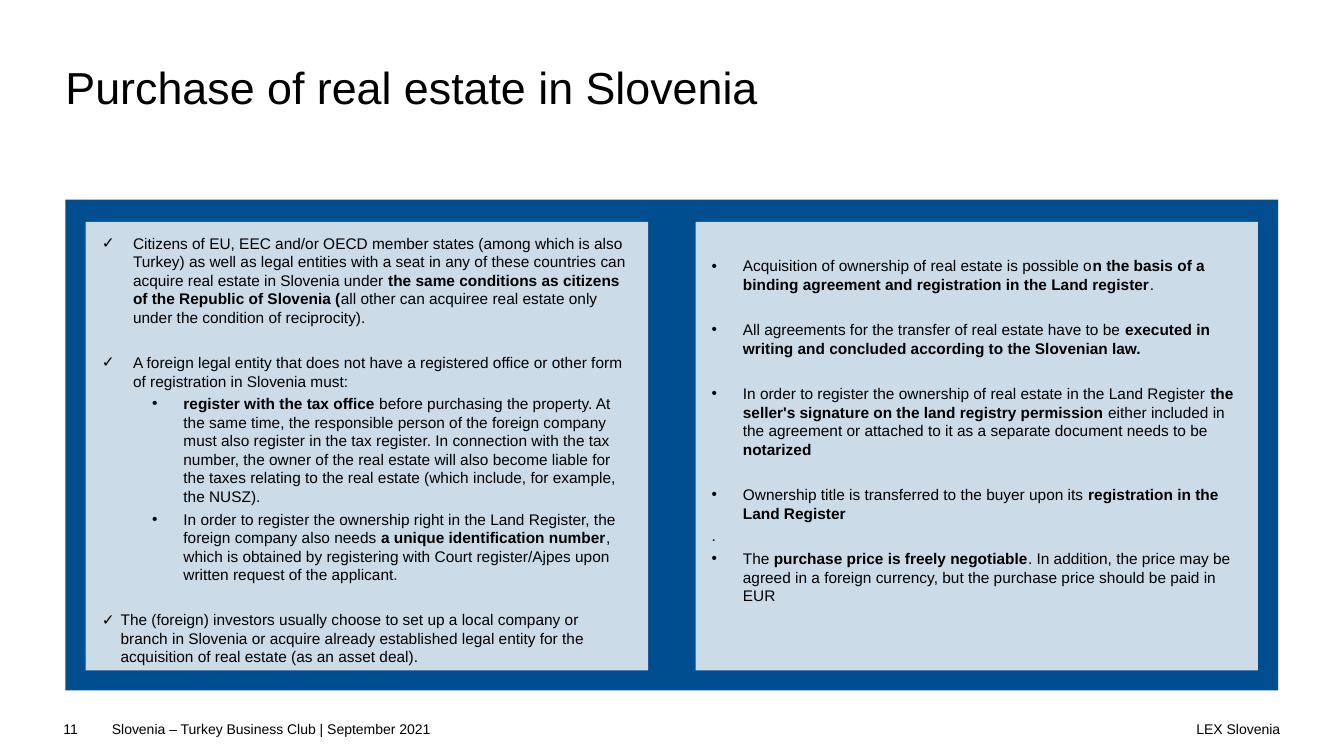
from dataclasses import dataclass
from typing import Optional

from lxml.etree import SubElement
from pptx import Presentation
from pptx.dml.color import RGBColor
from pptx.enum.shapes import MSO_SHAPE as Preset
from pptx.enum.text import MSO_ANCHOR as Anchor, PP_ALIGN as Align
from pptx.oxml.ns import qn
from pptx.util import Inches, Pt

# Grid: ten columns and ten rows to the inch
COLUMNS, ROWS = 133.33, 75
CELL = Inches(0.1)
FONT = "Arial"
BLACK, WHITE, NAVY = "000000", "FFFFFF", "004D90"
BODY_SIZE = 11
SPACE_AFTER = 3
LINE_GAP = 16.25  # one body line plus the space after it, in points


@dataclass(frozen=True)
class Box:
    column: float
    row: float
    columns: float
    rows: float


@dataclass(frozen=True)
class Label:
    text: str
    box: Box
    size: float
    align: Align = Align.LEFT
    line_spacing: float = 1.0


@dataclass(frozen=True)
class Item:
    text: str  # bold parts stand between double asterisks
    bullet: Optional[str] = "•"
    margin: float = 3.1
    hanging: float = 3.1
    gap_before: bool = False


@dataclass(frozen=True)
class Panel:
    items: list[Item]
    top_inset: float


BOARD = Box(6.5, 19.8, 120.3, 48.7)
PANEL_COLUMNS, PANEL_ROWS = 55.8, 44.5
PANEL_MARGIN, PANEL_TOP = 2, 22

LABELS = [
    Label("Purchase of real estate in Slovenia", Box(6.5, 6.5, 120.3, 9.8), 32, line_spacing=0.9),
    Label("11", Box(6.3, 71.5, 4.7, 2.8), 10),
    Label("Slovenia – Turkey Business Club | September 2021", Box(11.1, 71.5, 55.5, 2.8), 10),
    Label("LEX Slovenia", Box(66.7, 71.5, 60.3, 2.8), 10, Align.RIGHT),
]

ENTITIES = Panel([
    Item("Citizens of EU, EEC and/or OECD member states (among which is also Turkey) as well as "
         "legal entities with a seat in any of these countries can acquire real estate in Slovenia "
         "under **the same conditions as citizens of the Republic of Slovenia (**all other can "
         "acquiree real estate only under the condition of reciprocity).", "✓"),
    Item("A foreign legal entity that does not have a registered office or other form of "
         "registration in Slovenia must:", "✓", gap_before=True),
    Item("**register with the tax office **before purchasing the property. At the same time, the "
         "responsible person of the foreign company must also register in the tax register. In "
         "connection with the tax number, the owner of the real estate will also become liable for "
         "the taxes relating to the real estate (which include, for example, the NUSZ).", margin=8.1),
    Item("In order to register the ownership right in the Land Register, the foreign company also "
         "needs **a unique identification number**, which is obtained by registering with Court "
         "register/Ajpes upon written request of the applicant.", margin=8.1),
    Item("The (foreign) investors usually choose to set up a local company or branch in Slovenia or "
         "acquire already established legal entity for the acquisition of real estate (as an asset "
         "deal).", "✓", 1.87, 1.87, gap_before=True),
], top_inset=1.2)

AGREEMENTS = Panel([
    Item("Acquisition of ownership of real estate is possible o**n the basis of a binding agreement "
         "and registration in the Land register**."),
    Item("All agreements for the transfer of real estate have to be **executed in writing and "
         "concluded according to the Slovenian law.**", gap_before=True),
    Item("In order to register the ownership of real estate in the Land Register **the seller's "
         "signature on the land registry permission **either included in the agreement or attached "
         "to it as a separate document needs to be **notarized**", gap_before=True),
    Item("Ownership title is transferred to the buyer upon its **registration in the Land "
         "Register**", gap_before=True),
    Item(".", None, 0, 0),
    Item("The **purchase price is freely negotiable**. In addition, the price may be agreed in a "
         "foreign currency, but the purchase price should be paid in EUR"),
], top_inset=3.45)


def cells(count: float) -> int:
    return round(count * CELL)


def place(box: Box) -> tuple[int, int, int, int]:
    return cells(box.column), cells(box.row), cells(box.columns), cells(box.rows)


def color(hex_string: str) -> RGBColor:
    return RGBColor.from_string(hex_string)


def format_run(run, size: float, bold: bool = False) -> None:
    run.font.name = FONT
    run.font.size = Pt(size)
    run.font.bold = bold
    run.font.color.rgb = color(BLACK)


def set_insets(text_frame, left: float, top: float, right: float, bottom: float) -> None:
    text_frame.word_wrap = True
    text_frame.vertical_anchor = Anchor.TOP
    text_frame.margin_left, text_frame.margin_top = cells(left), cells(top)
    text_frame.margin_right, text_frame.margin_bottom = cells(right), cells(bottom)


def add_label(slide, label: Label) -> None:
    text_frame = slide.shapes.add_textbox(*place(label.box)).text_frame
    set_insets(text_frame, 0, 0, 0, 0)
    text_frame.text = label.text
    paragraph = text_frame.paragraphs[0]
    paragraph.alignment = label.align
    paragraph.line_spacing = label.line_spacing
    format_run(paragraph.runs[0], label.size)


def add_rectangle(slide, box: Box, fill: str, opacity: int = 100):
    shape = slide.shapes.add_shape(Preset.RECTANGLE, *place(box))
    shape.shadow.inherit = False
    shape.fill.solid()
    shape.fill.fore_color.rgb = color(fill)
    shape.line.fill.background()
    if opacity < 100:
        fill_color = shape.fill._xPr.find(f"{qn('a:solidFill')}/{qn('a:srgbClr')}")
        SubElement(fill_color, qn("a:alpha"), val=str(opacity * 1000))
    return shape


def write_item(paragraph, item: Item) -> None:
    paragraph.alignment = Align.LEFT
    paragraph.space_before = Pt(LINE_GAP if item.gap_before else 0)
    paragraph.space_after = Pt(SPACE_AFTER)
    properties = paragraph._p.get_or_add_pPr()
    properties.set("marL", str(cells(item.margin)))
    properties.set("indent", str(cells(-item.hanging)))
    if item.bullet:
        SubElement(properties, qn("a:buFont"), typeface=FONT)
        SubElement(properties, qn("a:buChar"), char=item.bullet)
    for index, part in enumerate(item.text.split("**")):
        if part:
            run = paragraph.add_run()
            run.text = part
            format_run(run, BODY_SIZE, bold=index % 2 == 1)


def add_panel(slide, panel: Panel, column: float) -> None:
    box = Box(column, PANEL_TOP, PANEL_COLUMNS, PANEL_ROWS)
    text_frame = add_rectangle(slide, box, WHITE, opacity=80).text_frame
    set_insets(text_frame, 1.6, panel.top_inset, 2, 1.2)
    for index, item in enumerate(panel.items):
        paragraph = text_frame.add_paragraph() if index else text_frame.paragraphs[0]
        write_item(paragraph, item)


def main() -> None:
    presentation = Presentation()
    presentation.slide_width, presentation.slide_height = cells(COLUMNS), cells(ROWS)
    slide = presentation.slides.add_slide(presentation.slide_layouts[6])

    # Title and footer
    for label in LABELS:
        add_label(slide, label)

    # Board with a panel at each end
    add_rectangle(slide, BOARD, NAVY)
    left_column = BOARD.column + PANEL_MARGIN
    right_column = BOARD.column + BOARD.columns - PANEL_MARGIN - PANEL_COLUMNS
    add_panel(slide, ENTITIES, left_column)
    add_panel(slide, AGREEMENTS, right_column)

    presentation.save("out.pptx")


if __name__ == "__main__":
    main()
